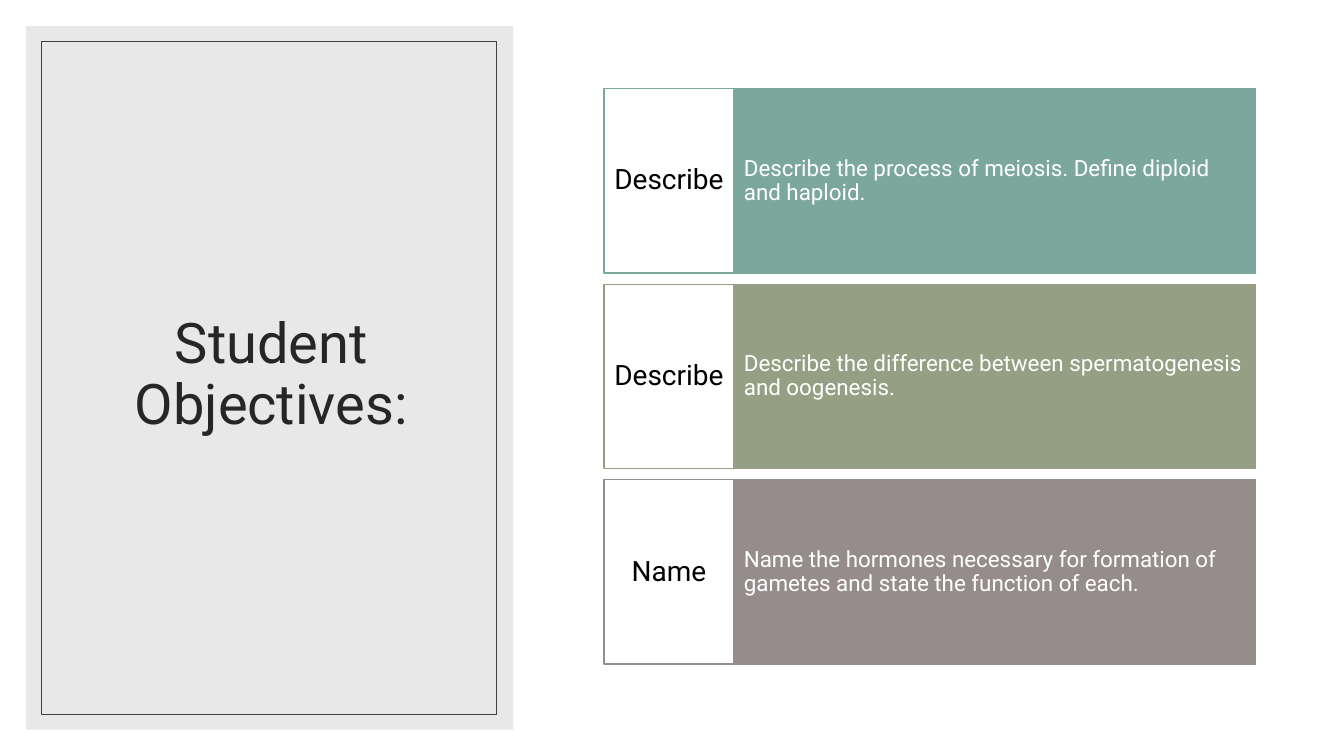
from lxml.etree import SubElement
from pptx import Presentation
from pptx.dml.color import RGBColor
from pptx.enum.shapes import MSO_SHAPE as Shape
from pptx.enum.text import MSO_ANCHOR as Anchor, PP_ALIGN as Align
from pptx.oxml.ns import qn
from pptx.util import Pt

PX = 9144  # EMU per px, 100 px to the inch
WIDTH, HEIGHT = 1333, 750
COLORS = {
    "white": "FFFFFF", "black": "000000", "panel": "D9D9D9", "frame": "404040",
    "title": "262626", "teal": "7BA79D", "olive": "949F83", "taupe": "968C8C",
}
OBJECTIVES = [
    ("Describe", "Describe the process of meiosis. Define diploid and haploid.", "teal"),
    ("Describe", "Describe the difference between spermatogenesis and oogenesis.", "olive"),
    ("Name", "Name the hormones necessary for formation of gametes "
             "and state the function of each.", "taupe"),
]
ROW_LEFT, ROW_TOP, ROW_HEIGHT, ROW_PITCH = 599, 88, 183, 194
VERB_WIDTH, DETAIL_WIDTH = 129, 517


class SlideBuilder:
    font = "Roboto"
    line_spacing = 0.9

    def __init__(self, slide):
        self.slide = slide

    def color(self, name):
        return RGBColor.from_string(COLORS[name])

    def rectangle(self, box, fill=None, line=None, line_width=1, opacity=100):
        shape = self.slide.shapes.add_shape(Shape.RECTANGLE, *(PX * value for value in box))
        shape.shadow.inherit = False
        if fill:
            shape.fill.solid()
            shape.fill.fore_color.rgb = self.color(fill)
            if opacity < 100:
                solid_fill = shape.element.spPr.find(qn("a:solidFill"))
                rgb = solid_fill.find(qn("a:srgbClr"))
                SubElement(rgb, qn("a:alpha"), val=str(opacity * 1000))
        else:
            shape.fill.background()
        if line:
            shape.line.color.rgb = self.color(line)
            shape.line.width = Pt(line_width)
        else:
            shape.line.fill.background()
        return shape

    def text_box(self, box, text, **style):
        shape = self.slide.shapes.add_textbox(*(PX * value for value in box))
        self.set_text(shape, text, **style)

    def set_text(self, shape, text, size, color, align=Align.CENTER, insets=(10, 5)):
        """Fill a shape with one vertically centred paragraph."""
        frame = shape.text_frame
        frame.word_wrap = True
        frame.vertical_anchor = Anchor.MIDDLE
        frame.margin_left = frame.margin_right = PX * insets[0]
        frame.margin_top = frame.margin_bottom = PX * insets[1]
        paragraph = frame.paragraphs[0]
        paragraph.alignment = align
        paragraph.line_spacing = self.line_spacing
        run = paragraph.add_run()
        run.text = text
        run.font.name = self.font
        run.font.size = Pt(size)
        run.font.color.rgb = self.color(color)

    def objective(self, top, verb, detail, color):
        detail_box = (ROW_LEFT + VERB_WIDTH, top, DETAIL_WIDTH, ROW_HEIGHT)
        detail_shape = self.rectangle(detail_box, color, color)
        self.set_text(detail_shape, detail, 16, "white", Align.LEFT, insets=(10, 47))
        verb_box = (ROW_LEFT, top, VERB_WIDTH, ROW_HEIGHT)
        verb_shape = self.rectangle(verb_box, "white", color)
        self.set_text(verb_shape, verb, 20, "black", insets=(7, 18))


def main():
    presentation = Presentation()
    presentation.slide_width = PX * WIDTH
    presentation.slide_height = PX * HEIGHT
    builder = SlideBuilder(presentation.slides.add_slide(presentation.slide_layouts[6]))

    builder.rectangle((0, 0, WIDTH, HEIGHT), "white")
    builder.rectangle((26, 26, 483, 698), "panel", opacity=60)
    builder.text_box((63, 61, 412, 624), "Student Objectives:", size=40, color="title")
    builder.rectangle((41, 41, 451, 668), line="frame", line_width=0.5)
    for index, (verb, detail, color) in enumerate(OBJECTIVES):
        builder.objective(ROW_TOP + index * ROW_PITCH, verb, detail, color)

    presentation.save("out.pptx")


if __name__ == "__main__":
    main()
